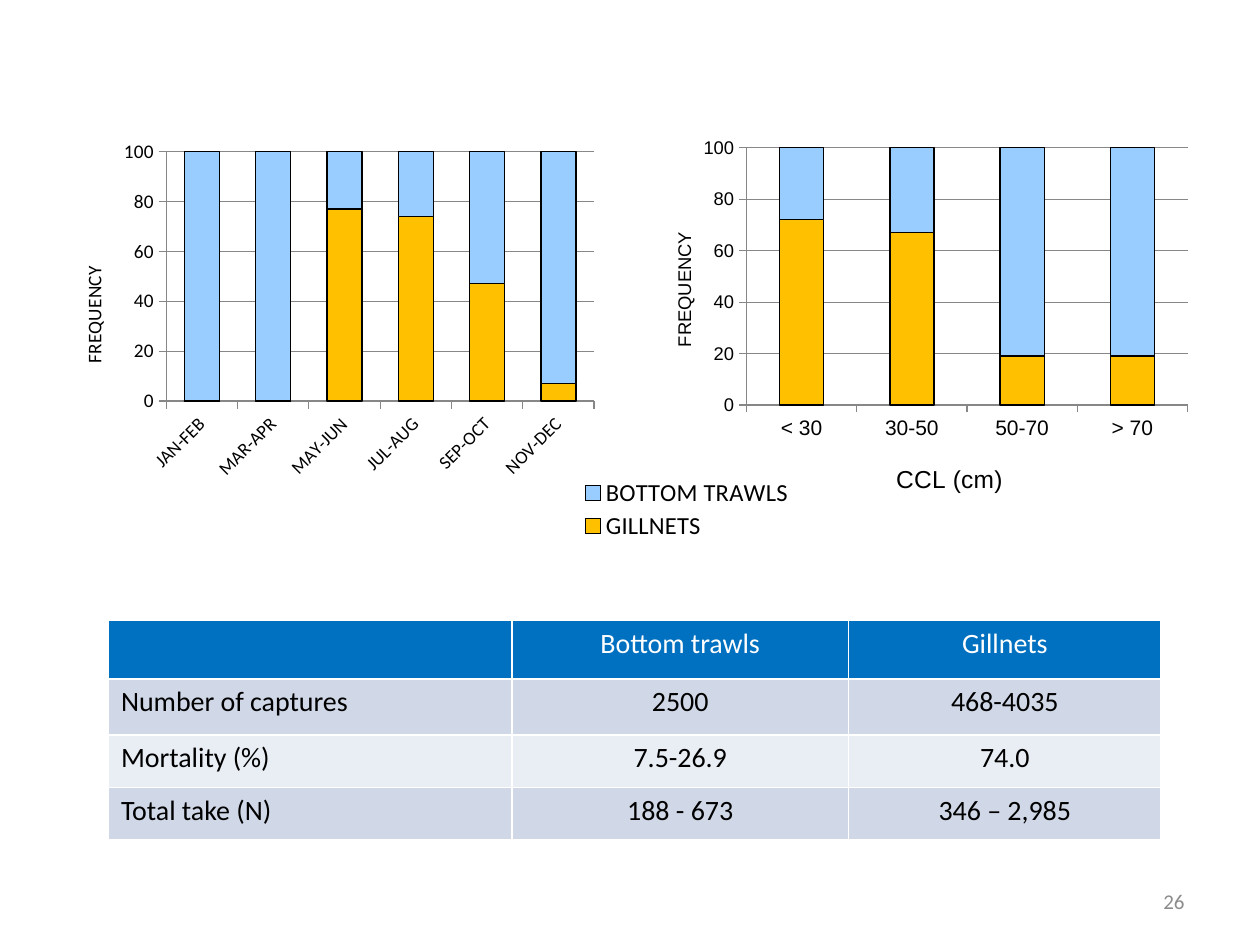
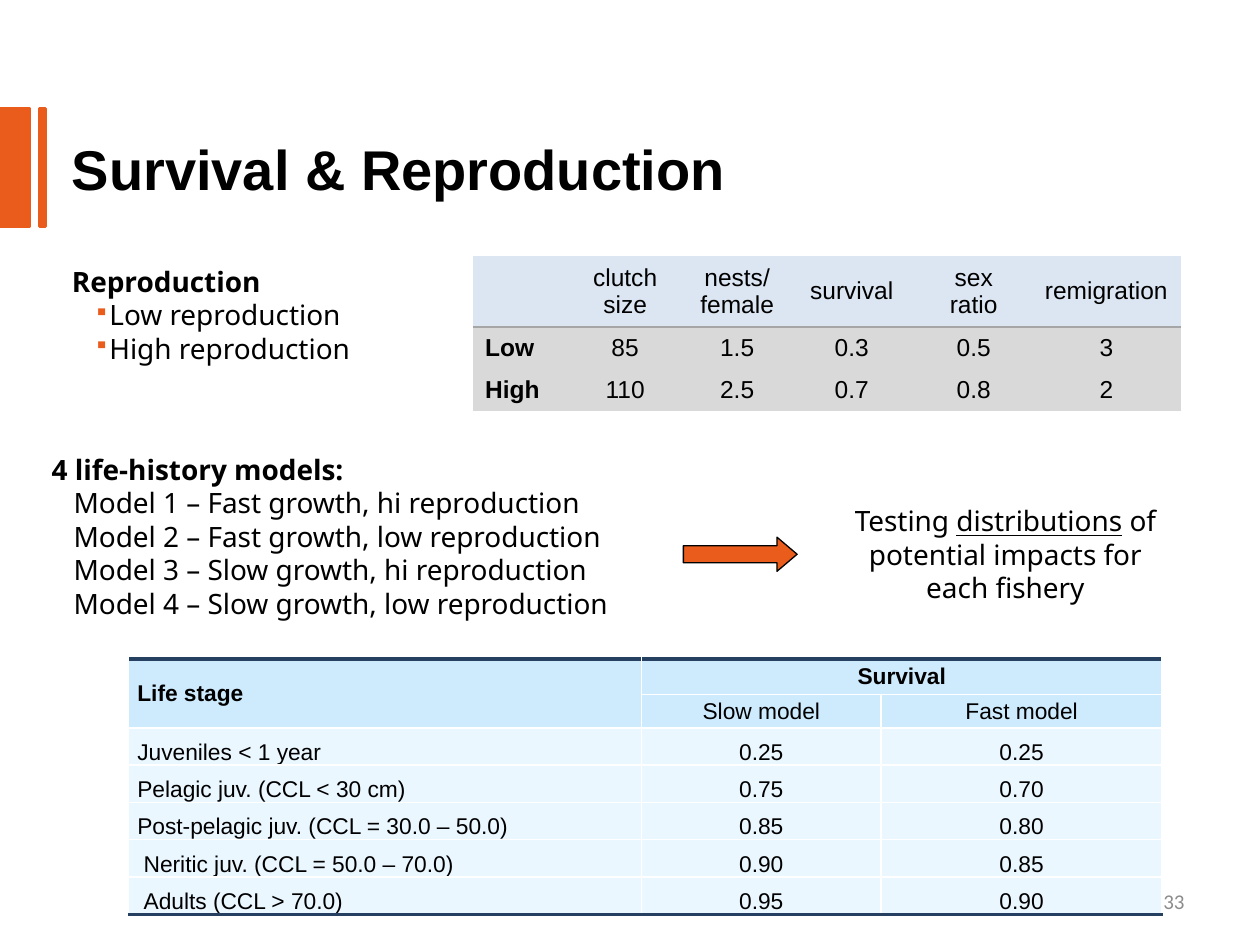
from lxml import etree
from pptx import Presentation
from pptx import util as u
from pptx.chart.data import CategoryChartData
from pptx.dml.color import RGBColor
from pptx.enum import chart as charts, shapes, text
from pptx.oxml import ns

BLACK, WHITE, GREY, ORANGE = "000000", "FFFFFF", "8C8C8C", "EA5C1C"
GILLNET, TRAWL = "FFC000", "99CCFF"
GRID, RULE, NAVY = "878787", "A6A6A6", "254061"
LEFT, CENTER, RIGHT = text.PP_ALIGN.LEFT, text.PP_ALIGN.CENTER, text.PP_ALIGN.RIGHT
TOP, MIDDLE, BOTTOM = text.MSO_ANCHOR.TOP, text.MSO_ANCHOR.MIDDLE, text.MSO_ANCHOR.BOTTOM
BODY = dict(font="Noto Sans", size=16, spacing=19.15)


def color(value):
    return RGBColor.from_string(value)


def points(values):
    return [u.Pt(value) for value in values]


def child(parent, tag, **attributes):
    return etree.SubElement(parent, ns.qn(tag), attributes)


def style_font(font, name, size, ink=BLACK, bold=False):
    font.name, font.size, font.bold = name, u.Pt(size), bold
    font.color.rgb = color(ink)


def write(frame, content, font="Arial", size=14, ink=BLACK, bold=False,
          align=LEFT, spacing=None, indent=0, bullet=None):
    """Add a paragraph; content is a string or a list of (text, underlined)."""
    first = frame.paragraphs[0]
    para = frame.add_paragraph() if first.runs else first
    para.alignment = align
    if spacing:
        para.line_spacing = u.Pt(spacing)
    properties = para._p.get_or_add_pPr()
    if indent:
        properties.set("marL", str(u.Pt(indent)))
        properties.set("indent", str(u.Pt(-8.5 if bullet else 0)))
    if bullet:
        bullet_color = child(properties, "a:buClr")
        child(bullet_color, "a:srgbClr", val=ORANGE)
        child(properties, "a:buSzPct", val="75000")
        child(properties, "a:buChar", char=bullet)
    for words, underlined in [(content, False)] if isinstance(content, str) else content:
        span = para.add_run()
        span.text = words
        style_font(span.font, font, size, ink, bold)
        if underlined:
            span.font.underline = True


def text_box(page, box, anchor=TOP, inset=3.6):
    frame = page.shapes.add_textbox(*points(box)).text_frame
    frame.word_wrap = True
    frame.vertical_anchor = anchor
    frame.margin_top = u.Pt(inset)
    return frame


def page_number(page, number):
    frame = text_box(page, (516, 500.5, 168, 28.5), MIDDLE)
    write(frame, number, font="Calibri", size=12, ink=GREY, align=RIGHT)


def solid_shape(page, kind, box, line, width):
    shape = page.shapes.add_shape(kind, *points(box))
    shape.shadow.inherit = False
    shape.fill.solid()
    shape.fill.fore_color.rgb = color(ORANGE)
    shape.line.color.rgb = color(line)
    shape.line.width = u.Pt(width)
    return shape


# Tables
def style_cell(cell, fill, borders, anchor=TOP, inset=None):
    """borders maps the sides L, R, T, B to (colour, width), or None for no line."""
    properties = cell._tc.get_or_add_tcPr()
    for side in "LRTB":
        edge = borders.get(side)
        line = child(properties, "a:ln" + side, w=str(u.Pt(edge[1] if edge else 0)))
        if edge:
            child(child(line, "a:solidFill"), "a:srgbClr", val=edge[0])
        else:
            child(line, "a:noFill")
    cell.fill.solid()
    cell.fill.fore_color.rgb = color(fill)
    cell.vertical_anchor = anchor
    if inset is not None:
        cell.margin_left = cell.margin_right = u.Pt(inset)
        cell.margin_top = cell.margin_bottom = 0


def add_grid(page, left, top, widths, heights):
    table = page.shapes.add_table(len(heights), len(widths), *points(
        (left, top, sum(widths), sum(heights)))).table
    table.first_row = table.horz_banding = False
    for column, width in zip(table.columns, widths):
        column.width = u.Pt(width)
    for row, height in zip(table.rows, heights):
        row.height = u.Pt(height)
    return table


def each_cell(table, rows):
    for r, row in enumerate(rows):
        for c, words in enumerate(row):
            yield r, c, table.cell(r, c), words


def captures_table(page, left, top):
    rows = [("", "Bottom trawls", "Gillnets"),
            ("Number of captures", "2500", "468-4035"),
            ("Mortality (%)", "7.5-26.9", "74.0"),
            ("Total take (N)", "188 - 673", "346 – 2,985")]
    fills = ["0070C0", "D0D8E8", "E9EDF4", "D0D8E8"]
    table = add_grid(page, left, top, (230.5, 192.5, 178.5), (33.5, 32, 30, 30))
    for r, c, cell, words in each_cell(table, rows):
        style_cell(cell, fills[r], dict.fromkeys("LRTB", (WHITE, 1)))
        if words:
            write(cell.text_frame, words, font="Calibri", size=16,
                  ink=BLACK if r else WHITE, align=CENTER if c else LEFT)


def reproduction_table(page, left, top):
    rows = [("", "clutch size", "nests/\nfemale", "survival", "sex ratio", "remigration"),
            ("Low", "85", "1.5", "0.3", "0.5", "3"),
            ("High", "110", "2.5", "0.7", "0.8", "2")]
    table = add_grid(page, left, top, (52, 70.5, 57.5, 73.5, 66, 85.5), (41, 24, 24))
    for r, c, cell, words in each_cell(table, rows):
        rule = {0: {"B": (RULE, 1.5)}, 1: {"T": (RULE, 1.5)}}.get(r, {})
        style_cell(cell, "D9D9D9" if r else "DCE6F2", rule, MIDDLE)
        for line in words.split("\n") if words else []:
            write(cell.text_frame, line, bold=c == 0, align=CENTER if c else LEFT)


def survival_table(page, left, top):
    rows = [("Life stage", "Survival", ""),
            ("", "Slow model", "Fast model"),
            ("Juveniles < 1 year", "0.25", "0.25"),
            ("Pelagic juv. (CCL < 30 cm)", "0.75", "0.70"),
            ("Post-pelagic juv. (CCL = 30.0 – 50.0)", "0.85", "0.80"),
            ("Neritic juv. (CCL = 50.0 – 70.0)", "0.90", "0.85"),
            ("Adults (CCL > 70.0)", "0.95", "0.90")]
    table = add_grid(page, left, top, (293, 137, 160.5), [20.5, 19] + [21.3] * 5)
    table.cell(0, 0).merge(table.cell(1, 0))
    table.cell(0, 1).merge(table.cell(0, 2))
    last = len(rows) - 1
    for r, c, cell, words in each_cell(table, rows):
        borders = dict.fromkeys("LRTB", (WHITE, 1))
        if r in (0, last):
            borders["B" if r else "T"] = (NAVY, 2.25)
        header = r < 2
        style_cell(cell, "CEEBFE" if header else "EBF7FF", borders,
                   MIDDLE if header else BOTTOM, inset=5)
        if words:
            write(cell.text_frame, words, size=13, bold=r == 0,
                  align=CENTER if c else LEFT, indent=3.6 if r >= 5 and c == 0 else 0)


# Charts
def set_layout(parent, index, x, y, width=None, height=None, inner=False):
    """Fix a chart part by fractions of the chart's size."""
    for old in parent.findall(ns.qn("c:layout")):
        parent.remove(old)
    layout = etree.Element(ns.qn("c:layout"))
    parent.insert(index, layout)
    manual = child(layout, "c:manualLayout")
    if inner:
        child(manual, "c:layoutTarget", val="inner")
    child(manual, "c:xMode", val="edge")
    child(manual, "c:yMode", val="edge")
    for tag, value in (("x", x), ("y", y), ("w", width), ("h", height)):
        if value is not None:
            child(manual, "c:" + tag, val=str(value))


def axis_style(axis, font, size):
    style_font(axis.tick_labels.font, font, size)
    axis.major_tick_mark = charts.XL_TICK_MARK.OUTSIDE
    axis.minor_tick_mark = charts.XL_TICK_MARK.NONE
    axis.format.line.color.rgb = color(GRID)
    axis.format.line.width = u.Pt(0.75)


def axis_title(axis, words, font, size, place):
    write(axis.axis_title.text_frame, words, font=font, size=size)
    set_layout(axis.axis_title._element, 1, *place)


def frequency_chart(page, box, categories, series, gap, plot_place, title_place,
                    font, label_size, value_size, title_size):
    data = CategoryChartData(number_format="0")
    data.categories = categories
    for name, values in series:
        data.add_series(name, values)
    chart = page.shapes.add_chart(
        charts.XL_CHART_TYPE.COLUMN_STACKED, *points(box), data).chart
    chart.has_title = chart.has_legend = False
    style_font(chart.font, font, label_size)
    plot = chart.plots[0]
    plot.gap_width, plot.overlap, plot.vary_by_categories = gap, 100, False
    for bars, fill in zip(plot.series, (GILLNET, TRAWL)):
        bars.format.fill.solid()
        bars.format.fill.fore_color.rgb = color(fill)
        bars.format.line.color.rgb = color(BLACK)
        bars.format.line.width = u.Pt(0.75)
    axis_style(chart.category_axis, font, label_size)
    scale = chart.value_axis
    axis_style(scale, font, value_size)
    scale.minimum_scale, scale.maximum_scale, scale.major_unit = 0, 100, 20
    scale.tick_labels.number_format = "0"
    scale.tick_labels.number_format_is_linked = False
    scale.has_major_gridlines = True
    scale.major_gridlines.format.line.color.rgb = color(GRID)
    scale.major_gridlines.format.line.width = u.Pt(0.75)
    axis_title(scale, "FREQUENCY", font, title_size, title_place)
    set_layout(chart._chartSpace.chart.plotArea, 0, *plot_place, inner=True)
    return chart


def season_chart(page, box):
    chart = frequency_chart(
        page, box, ["JAN-FEB", "MAR-APR", "MAY-JUN", "JUL-AUG", "SEP-OCT", "NOV-DEC"],
        [("GILLNETS", (0, 0, 77, 74, 47, 7)),
         ("BOTTOM TRAWLS", (100, 100, 23, 26, 53, 93))],
        104, (0.17, 0.05, 0.53, 0.54), (0.06, 0.29), "Calibri", 10.5, 11, 11)
    labels = chart.category_axis._element.find(ns.qn("c:txPr"))
    labels.find(ns.qn("a:bodyPr")).set("rot", "-2700000")
    chart.has_legend = True
    chart.legend.position = charts.XL_LEGEND_POSITION.RIGHT
    chart.legend.include_in_layout = False
    style_font(chart.legend.font, "Calibri", 14)
    set_layout(chart.legend._element, 1, 0.67, 0.75, 0.29, 0.15)


def size_chart(page, box):
    chart = frequency_chart(
        page, box, ["< 30", "30-50", "50-70", "> 70"],
        [("Series 1", (72, 67, 19, 19)), ("Series 2", (28, 33, 81, 81))],
        150, (0.19, 0.05, 0.79, 0.67), (0.05, 0.26), "Arial", 12, 10.5, 10.5)
    axis_title(chart.category_axis, "CCL (cm)", "Arial", 14, (0.45, 0.86))


# Text regions of the second slide
def title_band(page, top, words):
    for left, width in ((0, 16.5), (22.5, 3.5)):
        solid_shape(page, shapes.MSO_SHAPE.RECTANGLE, (left, top, width, 67.5), ORANGE, 2)
    write(text_box(page, (34, top + 11.5, 478, 73.5)), words, size=32, bold=True)


def listing(page, box, heading, lines, **line_format):
    frame = text_box(page, box, inset=5)
    write(frame, heading, bold=True, **BODY)
    for line in lines:
        write(frame, line, **BODY, **line_format)


def conclusion(page, left, top):
    arrow = solid_shape(page, shapes.MSO_SHAPE.RIGHT_ARROW,
                        (left, top + 24, 65, 19.5), BLACK, 0.75)
    arrow.adjustments[0], arrow.adjustments[1] = 0.5, 0.59
    frame = text_box(page, (left + 87.5, top, 193, 71.5), inset=5)
    write(frame, [("Testing ", False), ("distributions", True),
                  (" of potential impacts for each fishery", False)], align=CENTER, **BODY)


def captures_slide(page):
    season_chart(page, (16.5, 73.5, 461.5, 264))
    size_chart(page, (366, 73.5, 319, 219.5))
    captures_table(page, 62, 354.5)
    page_number(page, "26")


def survival_slide(page):
    title_band(page, 62, "Survival & Reproduction")
    listing(page, (34, 146, 289.5, 65.5), "Reproduction",
            ["Low reproduction", "High reproduction"], indent=21, bullet="▪")
    reproduction_table(page, 270, 146)
    listing(page, (22.5, 253.5, 376.5, 104.5), "4 life-history models:",
            [f"Model {number} – {growth} growth, {rate} reproduction"
             for number, (growth, rate) in enumerate(
                 [("Fast", "hi"), ("Fast", "low"), ("Slow", "hi"), ("Slow", "low")], 1)],
            indent=12.5)
    conclusion(page, 390.5, 283)
    survival_table(page, 73.5, 376.5)
    page_number(page, "33")


def main():
    deck = Presentation()
    deck.slide_width, deck.slide_height = u.Pt(720), u.Pt(540)
    for build in (captures_slide, survival_slide):
        build(deck.slides.add_slide(deck.slide_layouts[6]))
    deck.save("out.pptx")


if __name__ == "__main__":
    main()
